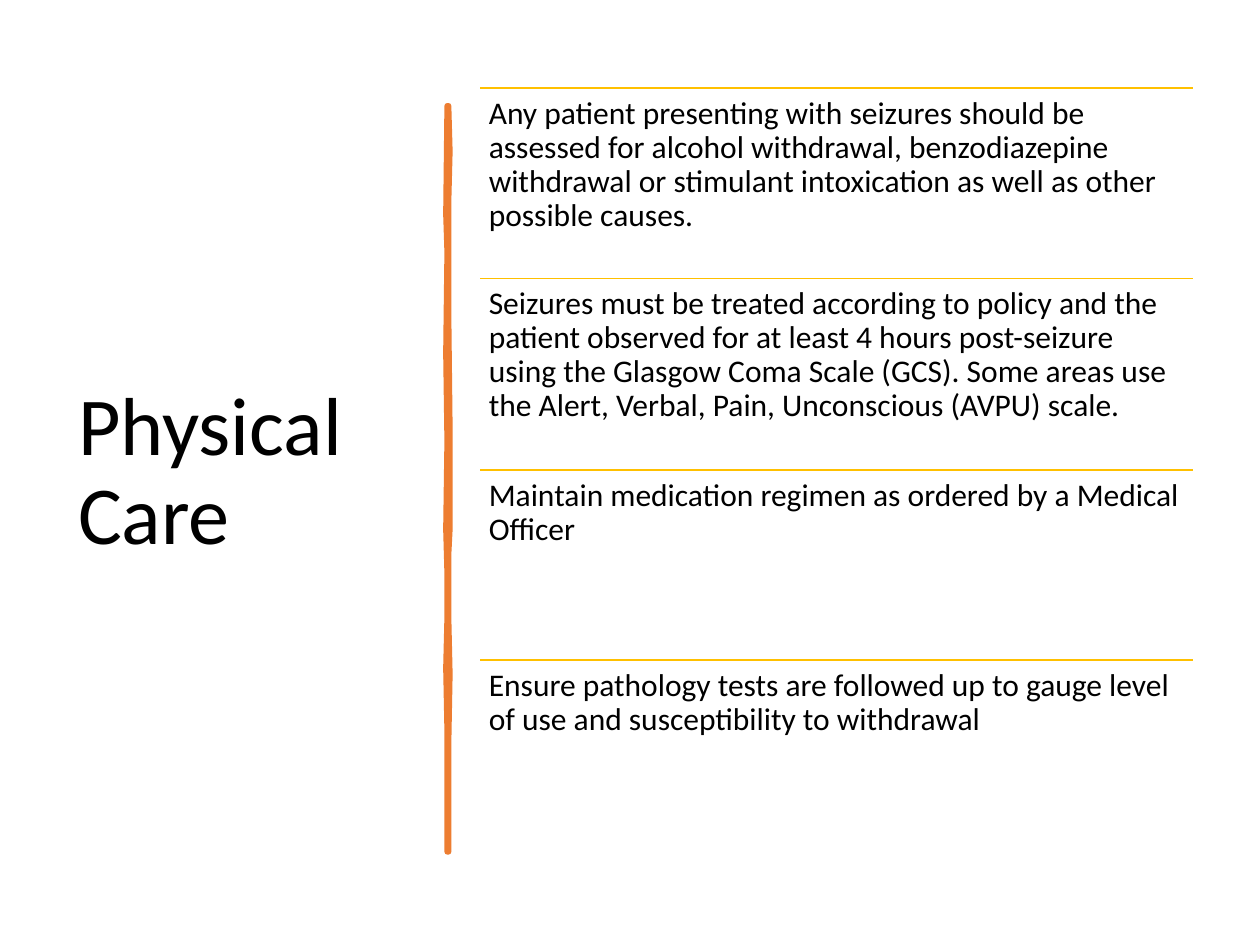
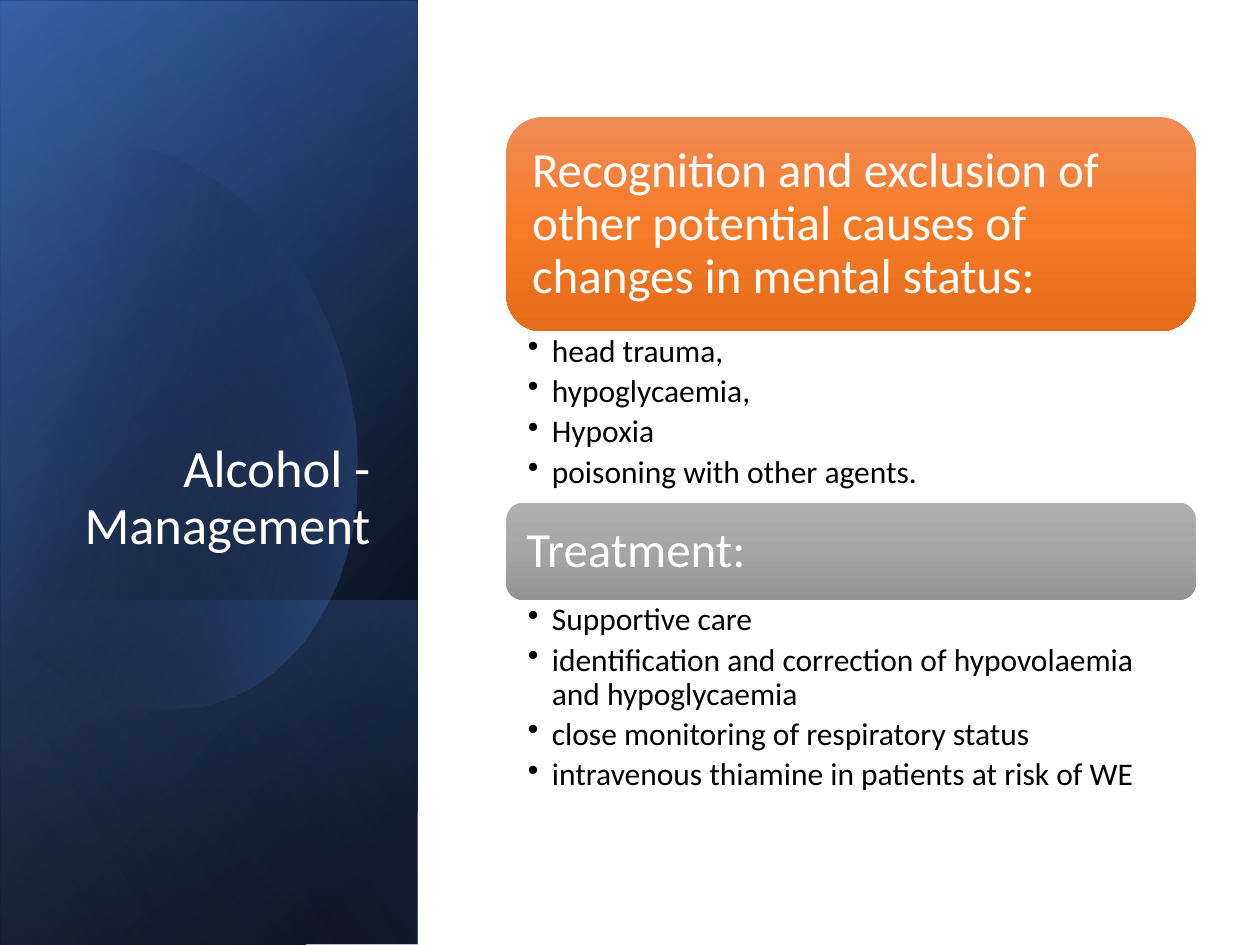
"""Build two slides on physical care and the management of alcohol withdrawal."""
from dataclasses import dataclass

from lxml.etree import SubElement
from pptx import Presentation
from pptx.dml.color import RGBColor
from pptx.enum.shapes import MSO_CONNECTOR, MSO_SHAPE
from pptx.enum.text import MSO_ANCHOR, MSO_AUTO_SIZE, PP_ALIGN
from pptx.oxml.ns import qn
from pptx.util import Pt

PX = 9144


@dataclass(frozen=True)
class Theme:
    font: str = "Calibri"
    black: str = "000000"
    white: str = "FFFFFF"
    orange: str = "ED7D31"
    gold: str = "FFC000"
    blue: str = "4472C4"
    dark_blue: str = "2F5597"
    light_blue: str = "8FAADC"
    orange_blend: tuple = ((0, "F18C57", 100), (50, "F67B28", 100), (100, "E56C19", 100))
    grey_blend: tuple = ((0, "AFAFAF", 100), (50, "A5A5A5", 100), (100, "939393", 100))
    large_title: int = 47
    small_title: int = 30
    heading: int = 28
    body: int = 18


theme = Theme()


def write_text(shape, text, size=theme.body, color=theme.black, align=PP_ALIGN.LEFT,
               anchor=MSO_ANCHOR.TOP, margins=(10, 5, 10, 5), bullets=False):
    frame = shape.text_frame
    frame.text = text
    frame.word_wrap = True
    frame.auto_size = MSO_AUTO_SIZE.NONE
    frame.vertical_anchor = anchor
    (frame.margin_left, frame.margin_top,
     frame.margin_right, frame.margin_bottom) = [margin * PX for margin in margins]
    for paragraph in frame.paragraphs:
        paragraph.alignment = align
        paragraph.line_spacing = 0.9
        paragraph.space_before = Pt(0)
        paragraph.font.name = theme.font
        paragraph.font.size = Pt(size)
        paragraph.font.color.rgb = RGBColor.from_string(color)
        if bullets:
            paragraph.space_after = Pt(size * 0.2)
            properties = paragraph._p.get_or_add_pPr()
            properties.set("marL", str(19 * PX))
            properties.set("indent", str(-19 * PX))
            SubElement(properties, qn("a:buChar"), char="•")


def paint_gradient(shape, stops, angle):
    shape.shadow.inherit = False
    shape.line.fill.background()
    properties = shape._element.spPr
    gradient = SubElement(properties, qn("a:gradFill"), rotWithShape="1")
    stop_list = SubElement(gradient, qn("a:gsLst"))
    for position, color, opacity in stops:
        stop = SubElement(stop_list, qn("a:gs"), pos=str(position * 1000))
        tint = SubElement(stop, qn("a:srgbClr"), val=color)
        if opacity < 100:
            SubElement(tint, qn("a:alpha"), val=str(opacity * 1000))
    SubElement(gradient, qn("a:lin"), ang=str(angle * 60000), scaled="0")
    properties.insert(2, gradient)


presentation = Presentation()
presentation.slide_width = 1000 * PX
presentation.slide_height = 750 * PX
title_only = presentation.slide_layouts[5]

care_slide = presentation.slides.add_slide(title_only)
title = care_slide.shapes.title
title.left, title.top, title.width, title.height = [n * PX for n in (52, 70, 280, 611)]
write_text(title, "Physical Care", size=theme.large_title, anchor=MSO_ANCHOR.MIDDLE)

brush_edge = [
    (357, 120), (356, 160), (356, 250), (357, 340), (357, 420), (356, 440), (356, 490),
    (357, 535), (356, 590), (356, 676), (355, 676), (355, 580), (354, 530), (355, 490),
    (355, 455), (354, 420), (355, 350), (354, 280), (355, 200), (354, 170), (355, 84),
]
builder = care_slide.shapes.build_freeform(356, 84, scale=PX)
builder.add_line_segments(brush_edge, close=True)
brush = builder.convert_to_shape()
brush.shadow.inherit = False
brush.fill.solid()
brush.fill.fore_color.rgb = RGBColor.from_string(theme.orange)
brush.line.color.rgb = RGBColor.from_string(theme.orange)
brush.line.width = Pt(3.25)
SubElement(brush._element.spPr.find(qn("a:ln")), qn("a:round"))

care_points = [
    "Any patient presenting with seizures should be assessed for alcohol withdrawal, "
    "benzodiazepine withdrawal or stimulant intoxication as well as other possible causes.",
    "Seizures must be treated according to policy and the patient observed for at least "
    "4 hours post-seizure using the Glasgow Coma Scale (GCS). Some areas use the Alert, "
    "Verbal, Pain, Unconscious (AVPU) scale.",
    "Maintain medication regimen as ordered by a Medical Officer",
    "Ensure pathology tests are followed up to gauge level of use and susceptibility "
    "to withdrawal",
]
for row, point in enumerate(care_points):
    top = round(70 + row * 151.4) * PX
    rule = care_slide.shapes.add_connector(
        MSO_CONNECTOR.STRAIGHT, 381 * PX, top, 947 * PX, top)
    rule.line.color.rgb = RGBColor.from_string(theme.gold)
    rule.line.width = Pt(1)
    SubElement(rule._element.spPr, qn("a:effectLst"))
    box = care_slide.shapes.add_textbox(381 * PX, top, 566 * PX, 151 * PX)
    write_text(box, point, margins=(7, 7, 7, 7))

alcohol_slide = presentation.slides.add_slide(title_only)
panels = [
    ((-209, 209, 750, 331), ((8, theme.black, 100), (100, theme.dark_blue, 100)), 50),
    ((-209, 211, 750, 331), ((0, theme.black, 0), (99, theme.blue, 46)), 30),
    ((29, 448, 274, 331), ((2, theme.blue, 29), (100, theme.black, 30)), 130),
    ((-209, 209, 750, 331), ((0, theme.black, 0), (99, theme.light_blue, 11)), 120),
]
for bounds, stops, angle in panels[:3]:
    panel = alcohol_slide.shapes.add_shape(MSO_SHAPE.RECTANGLE, *[n * PX for n in bounds])
    panel.rotation = 90
    panel._element.spPr.find(qn("a:xfrm")).set("flipH", "1")
    paint_gradient(panel, stops, angle)

oval_curves = [
    ((96, 114), (171, 122), (244, 192), (273, 290)),
    ((273, 290), (307, 412), (262, 531), (171, 557)),
    ((171, 557), (114, 574), (53, 550), (7, 500)),
    ((-3, 488), (-3, 488), (-25, 166), (-25, 166)),
    ((-15, 154), (2, 137), (22, 125), (45, 118)),
    ((45, 118), (62, 113), (79, 112), (96, 114)),
]
oval_edge = []
for curve in oval_curves:
    for step in range(17):
        t = step / 16
        weights = ((1 - t) ** 3, 3 * t * (1 - t) ** 2, 3 * t * t * (1 - t), t ** 3)
        oval_edge.append(tuple(
            sum(weight * point[axis] for weight, point in zip(weights, curve))
            for axis in (0, 1)))
builder = alcohol_slide.shapes.build_freeform(*oval_edge[0], scale=PX)
builder.add_line_segments(oval_edge[1:], close=True)
paint_gradient(builder.convert_to_shape(), ((29, theme.black, 0), (100, theme.blue, 43)), 14)

for bounds, stops, angle in panels[3:]:
    panel = alcohol_slide.shapes.add_shape(MSO_SHAPE.RECTANGLE, *[n * PX for n in bounds])
    panel.rotation = 90
    panel._element.spPr.find(qn("a:xfrm")).set("flipH", "1")
    paint_gradient(panel, stops, angle)

title = alcohol_slide.shapes.title
title._element.getparent().append(title._element)
title.left, title.top, title.width, title.height = [n * PX for n in (48, 184, 256, 262)]
write_text(title, "Alcohol - Management", size=theme.small_title, color=theme.white,
           align=PP_ALIGN.RIGHT, anchor=MSO_ANCHOR.BOTTOM)

sections = [
    ("Recognition and exclusion of other potential causes of changes in mental status:",
     theme.orange_blend, 93, 170, 136,
     ["head trauma,", "hypoglycaemia,", "Hypoxia", "poisoning with other agents."]),
    ("Treatment:", theme.grey_blend, 399, 77, 162,
     ["Supportive care", "identification and correction of hypovolaemia and hypoglycaemia",
      "close monitoring of respiratory status",
      "intravenous thiamine in patients at risk of WE"]),
]
for heading, blend, top, heading_height, list_height, items in sections:
    banner = alcohol_slide.shapes.add_shape(
        MSO_SHAPE.ROUNDED_RECTANGLE, 402 * PX, top * PX, 547 * PX, heading_height * PX)
    paint_gradient(banner, blend, 90)
    write_text(banner, heading, size=theme.heading, color=theme.white,
               anchor=MSO_ANCHOR.MIDDLE, margins=(12, 12, 12, 12))
    box = alcohol_slide.shapes.add_textbox(
        402 * PX, (top + heading_height) * PX, 547 * PX, list_height * PX)
    write_text(box, "\n".join(items), margins=(17, 3, 14, 3), bullets=True)

presentation.save("out.pptx")
